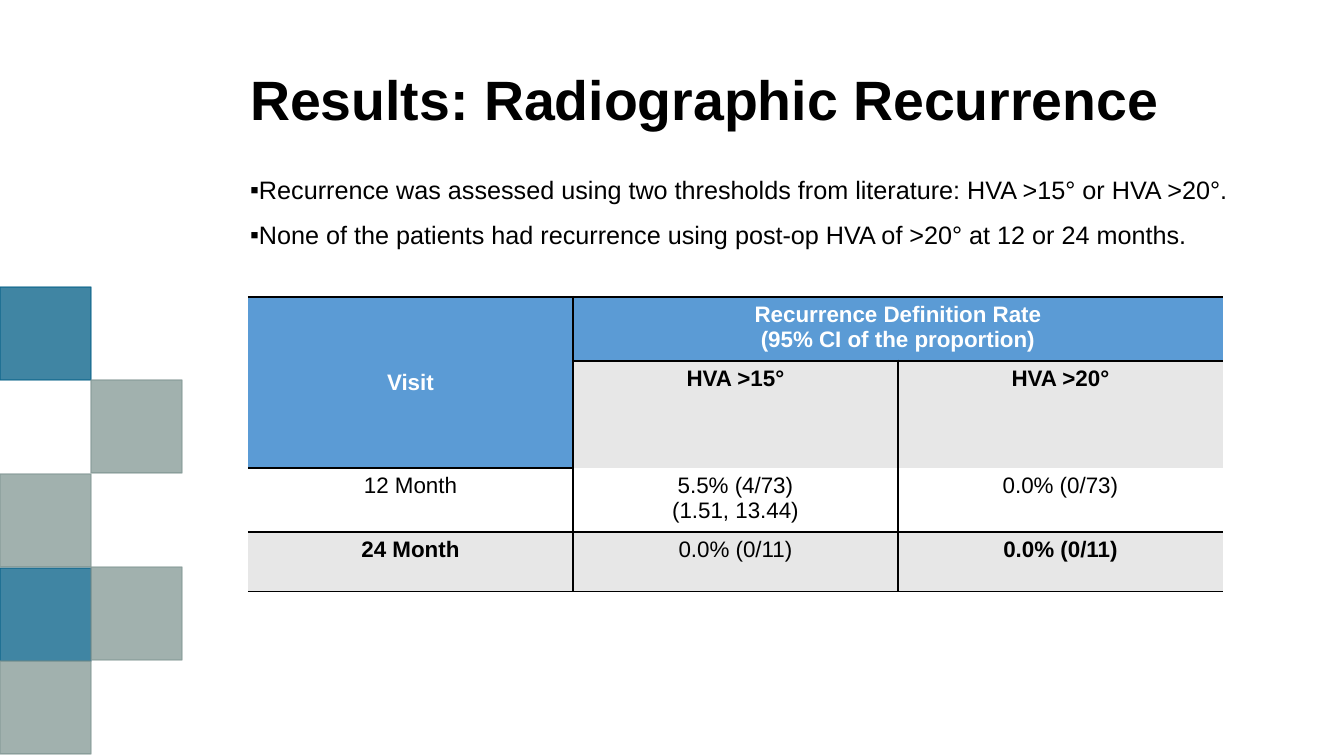
import pptx
import pptx.dml.color
import pptx.enum.shapes
import pptx.enum.text
import pptx.oxml
import pptx.oxml.ns
import pptx.util

SCALE = 914400 / 100.8
BLACK, WHITE, BLUE, GREY = "000000", "FFFFFF", "5B9BD5", "E7E7E7"
TEAL, SAGE = "005D85", "829794"
ALIGN = pptx.enum.text.PP_ALIGN
ANCHOR = pptx.enum.text.MSO_ANCHOR

TILE_W, TILE_H = 91, 93
TILES = [(0, 287, TEAL), (0, 568, TEAL), (0, 661, SAGE),
         (91, 380, SAGE), (91, 567, SAGE), (0, 474, SAGE)]

POINTS = """Recurrence was assessed using two thresholds from literature: HVA >15° or HVA >20°.
None of the patients had recurrence using post-op HVA of >20° at 12 or 24 months."""

# Each cell: text, fill, text colour, bold
ROWS = [
    [("Visit", BLUE, WHITE, True),
     ("Recurrence Definition Rate\n(95% CI of the proportion)", BLUE, WHITE, True),
     ("", BLUE, WHITE, True)],
    [("", BLUE, WHITE, True),
     ("HVA >15°", GREY, BLACK, True), ("HVA >20°", GREY, BLACK, True)],
    [("12 Month", WHITE, BLACK, False),
     ("5.5% (4/73)\n(1.51, 13.44)", WHITE, BLACK, False),
     ("0.0% (0/73)", WHITE, BLACK, False)],
    [("24 Month", GREY, BLACK, True),
     ("0.0% (0/11)", GREY, BLACK, False), ("0.0% (0/11)", GREY, BLACK, True)],
]
HEIGHTS = [64, 107, 64, 60]
COL_W = 325
# Rule widths in points: across[edge][column] and down[row][edge]
ACROSS = [(2, 2, 2), (0, 2, 2), (2, 0, 0), (1, 1, 1), (1, 1, 1)]
DOWN = [(0, 1, 0, 0)] + [(0, 1, 1, 0)] * 3


def px(n):
    return pptx.util.Emu(round(n * SCALE))


def rgb(code):
    return pptx.dml.color.RGBColor.from_string(code)


def place(shape, x, y, w, h):
    shape.left, shape.top, shape.width, shape.height = map(px, (x, y, w, h))


def write(frame, text, size, color=BLACK, bold=False, align=ALIGN.LEFT,
          space=1.0, bullet=None):
    """Fill a text frame, one paragraph per line of text."""
    for i, line in enumerate(text.split("\n")):
        para = frame.add_paragraph() if i else frame.paragraphs[0]
        if bullet:
            props = para._p.get_or_add_pPr()
            props.set("marL", "0")
            props.set("indent", "0")
            mark = pptx.oxml.parse_xml(
                f'<a:buChar {pptx.oxml.ns.nsdecls("a")} char="{bullet}"/>')
            props.append(mark)
        para.alignment = align
        para.line_spacing = space
        para.space_before = pptx.util.Pt(0)
        run = para.add_run()
        run.text = line
        font = run.font
        font.name, font.size, font.bold = "Arial", pptx.util.Pt(size), bold
        font.color.rgb = rgb(color)


def tile(slide, x, y, color):
    shape = slide.shapes.add_shape(
        pptx.enum.shapes.MSO_SHAPE.RECTANGLE, px(x), px(y), px(TILE_W), px(TILE_H))
    shape.shadow.inherit = False
    shape.fill.solid()
    shape.fill.fore_color.rgb = rgb(color)
    shape.line.color.rgb = rgb(color)
    shape.line.width = pptx.util.Pt(1)
    for node in shape._element.spPr.iter(pptx.oxml.ns.qn("a:srgbClr")):
        node.append(pptx.oxml.parse_xml(
            f'<a:alpha {pptx.oxml.ns.nsdecls("a")} val="75000"/>'))


def rule(cell, side, width):
    """Draw one cell border, or clear it when the width is 0."""
    paint = (f'<a:solidFill><a:srgbClr val="{BLACK}"/></a:solidFill>'
             if width else "<a:noFill/>")
    cell._tc.get_or_add_tcPr().append(pptx.oxml.parse_xml(
        f'<a:ln{side} {pptx.oxml.ns.nsdecls("a")} w="{width * 12700}">'
        f'{paint}</a:ln{side}>'))


def grid(slide, x, y):
    count = len(ROWS[0])
    table = slide.shapes.add_table(
        len(ROWS), count, px(x), px(y), px(COL_W * count), px(sum(HEIGHTS))).table
    table.first_row = table.horz_banding = False
    for col in table.columns:
        col.width = px(COL_W)
    for r, (row, height) in enumerate(zip(ROWS, HEIGHTS)):
        table.rows[r].height = px(height)
        for c, (text, fill, color, bold) in enumerate(row):
            cell = table.cell(r, c)
            widths = (DOWN[r][c], DOWN[r][c + 1], ACROSS[r][c], ACROSS[r + 1][c])
            for side, width in zip("LRTB", widths):
                rule(cell, side, width)
            cell.fill.solid()
            cell.fill.fore_color.rgb = rgb(fill)
            if text:
                write(cell.text_frame, text, 16, color, bold, ALIGN.CENTER)
    visit, head = table.cell(0, 0), table.cell(0, 1)
    visit.merge(table.cell(1, 0))
    head.merge(table.cell(0, 2))
    visit.vertical_anchor = ANCHOR.MIDDLE


def main():
    deck = pptx.Presentation()
    deck.slide_width, deck.slide_height = px(1344), px(756)
    slide = deck.slides.add_slide(deck.slide_layouts[1])
    for x, y, color in TILES:
        tile(slide, x, y, color)

    title, body = slide.placeholders
    place(title, 240, 51, 1012, 103)
    title.text_frame.vertical_anchor = ANCHOR.MIDDLE
    write(title.text_frame, "Results: Radiographic Recurrence", 39.6,
          bold=True, space=0.9)
    place(body, 240, 154, 1080, 96)
    body.text_frame.auto_size = pptx.enum.text.MSO_AUTO_SIZE.NONE
    write(body.text_frame, POINTS, 18, space=1.5, bullet="▪")

    grid(slide, 248, 297)
    deck.save("out.pptx")


if __name__ == "__main__":
    main()
